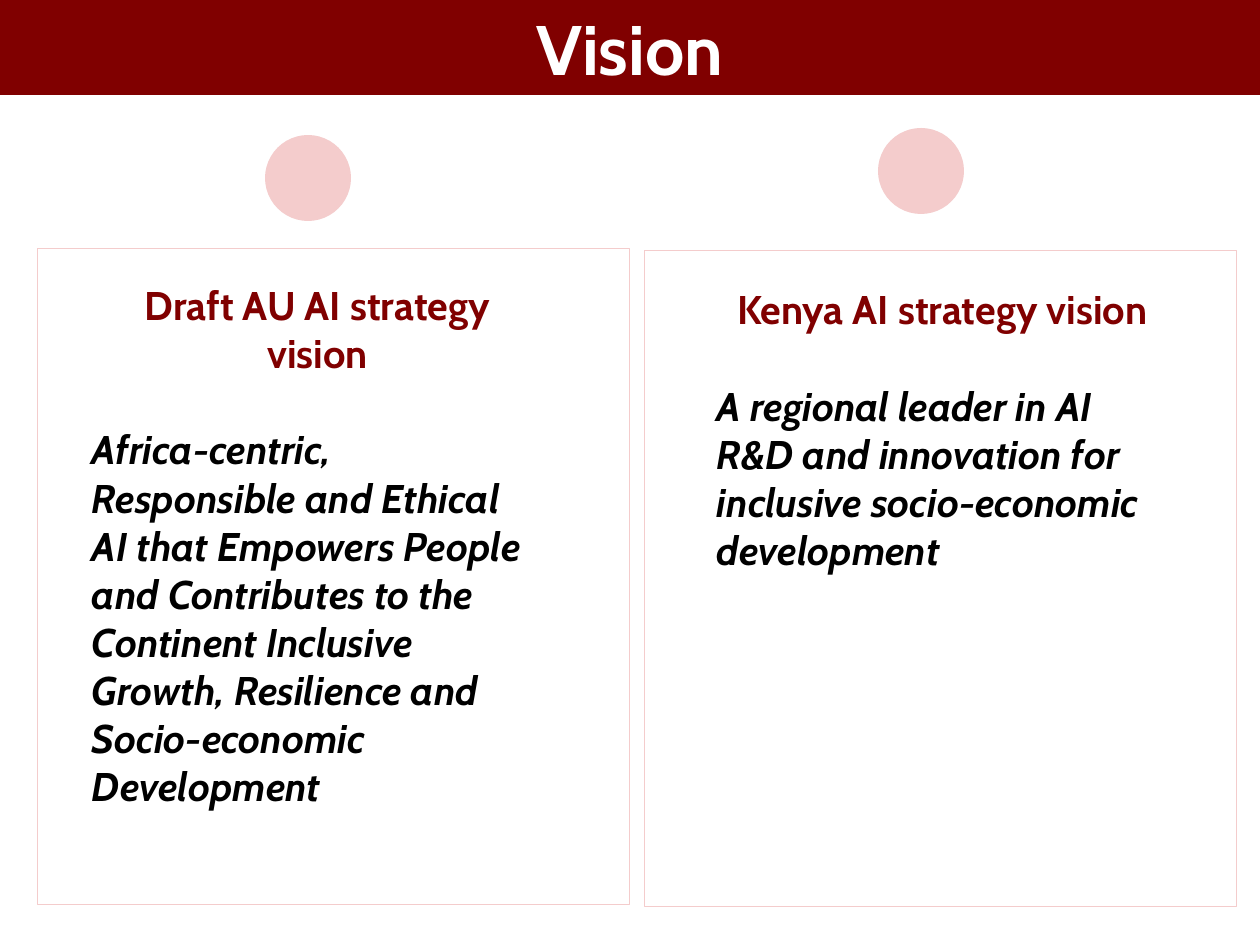
import pptx
import pptx.util
import pptx.dml.color
import pptx.enum.shapes
import pptx.enum.text

PX = 10160  # EMU per px, 90 px to the inch
MAROON = pptx.dml.color.RGBColor(0x80, 0x00, 0x00)
PINK = pptx.dml.color.RGBColor(0xF4, 0xCC, 0xCC)
WHITE = pptx.dml.color.RGBColor(0xFF, 0xFF, 0xFF)
BLACK = pptx.dml.color.RGBColor(0x00, 0x00, 0x00)
SHAPE = pptx.enum.shapes.MSO_SHAPE
ALIGN = pptx.enum.text.PP_ALIGN

deck = pptx.Presentation()
deck.slide_width = 1260 * PX
deck.slide_height = 945 * PX
slide = deck.slides.add_slide(deck.slide_layouts[6])


def add_block(kind, left, top, width, height, fill=None, line=None):
    block = slide.shapes.add_shape(kind, left * PX, top * PX, width * PX, height * PX)
    block.shadow.inherit = False
    if fill is None:
        block.fill.background()
    else:
        block.fill.solid()
        block.fill.fore_color.rgb = fill
    if line is None:
        block.line.fill.background()
    else:
        block.line.color.rgb = line
        block.line.width = pptx.util.Pt(0.75)
    return block


def write(paragraph, text, size=32, color=BLACK, italic=False, align=ALIGN.LEFT, before=0):
    paragraph.alignment = align
    paragraph.space_before = pptx.util.Pt(before)
    run = paragraph.add_run()
    run.text = text
    run.font.name = "Cabin"
    run.font.size = pptx.util.Pt(size)
    run.font.bold = True
    run.font.italic = italic
    run.font.color.rgb = color


# Title band
band = add_block(SHAPE.RECTANGLE, 0, 0, 1260, 95, fill=MAROON)
band.text_frame.vertical_anchor = pptx.enum.text.MSO_ANCHOR.MIDDLE
write(band.text_frame.paragraphs[0], "Vision", size=56, color=WHITE, align=ALIGN.CENTER)

# Vision cards: card left/top, dot left/top, statement left/top/height, heading, vision
cards = [
    ((38, 248), (265, 135), (79, 275, 594), "Draft AU AI strategy vision",
     "Africa-centric, Responsible and Ethical AI that Empowers People and Contributes "
     "to the Continent Inclusive Growth, Resilience and Socio-economic Development"),
    ((645, 250), (878, 128), (704, 279, 400), "Kenya AI strategy vision",
     "A regional leader in AI R&D and innovation for inclusive socio-economic development"),
]
for card, dot, (left, top, height), heading, vision in cards:
    add_block(SHAPE.RECTANGLE, *card, 592, 657, line=PINK)
    add_block(SHAPE.OVAL, *dot, 86, 86, fill=PINK)

    statement = slide.shapes.add_textbox(left * PX, top * PX, 477 * PX, height * PX).text_frame
    statement.word_wrap = True
    statement.margin_left = statement.margin_right = 13 * PX
    statement.margin_top = statement.margin_bottom = 6 * PX
    write(statement.paragraphs[0], heading, color=MAROON, align=ALIGN.CENTER)
    write(statement.add_paragraph(), vision, italic=True, before=38.4)

deck.save("out.pptx")
